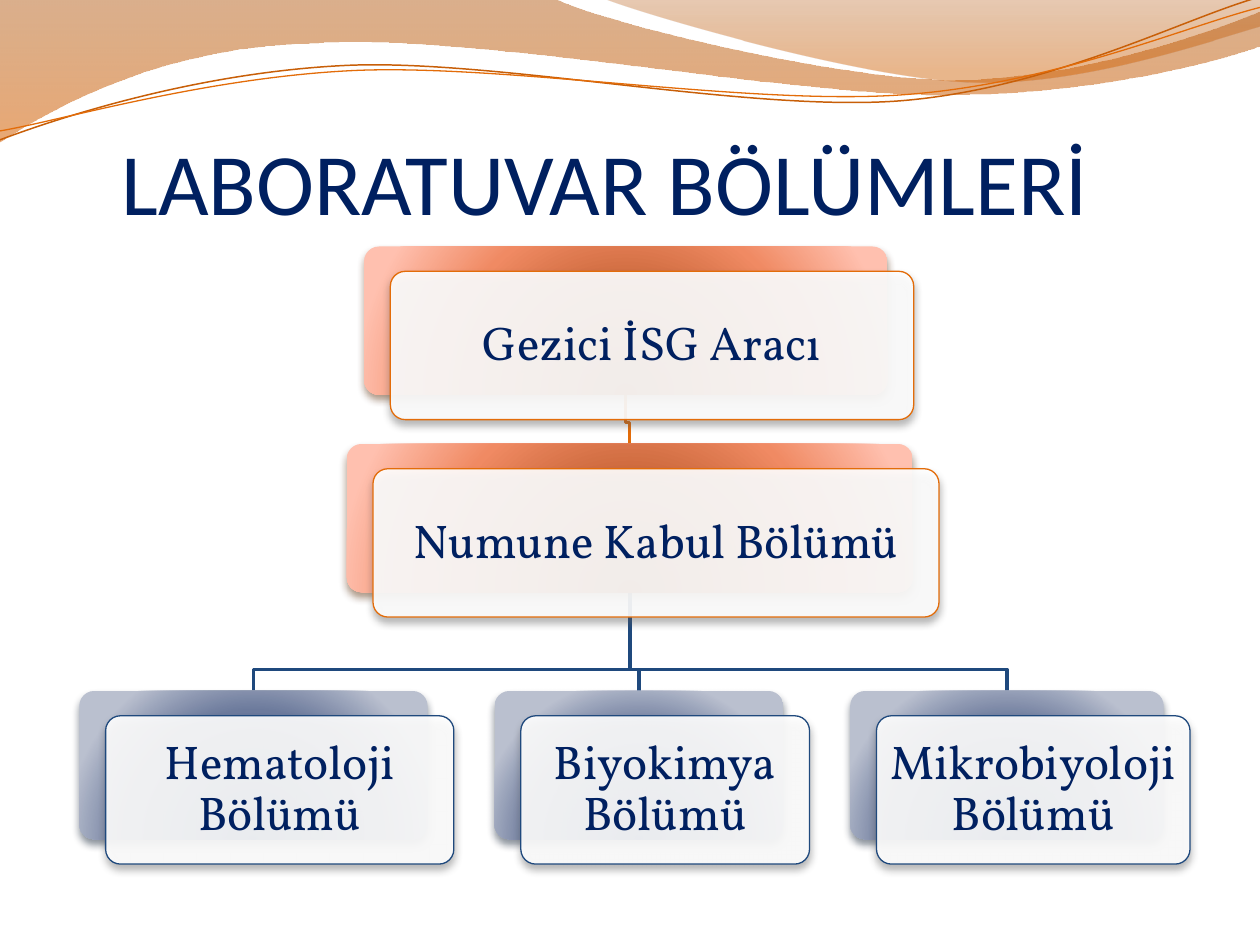
from lxml import etree
from pptx import Presentation
from pptx import util as u
from pptx.dml.color import RGBColor
from pptx.enum import shapes, text
from pptx.oxml import parse_xml
from pptx.oxml.ns import nsdecls, qn

NAVY = RGBColor(0x00, 0x20, 0x60)
WHITE = RGBColor(0xFF, 0xFF, 0xFF)
ORANGE = RGBColor(0xE3, 0x6C, 0x09)
DARK_ORANGE = RGBColor(0xC8, 0x5F, 0x08)
BLUE = RGBColor(0x1F, 0x49, 0x7D)
RUST = RGBColor(0xAF, 0x4F, 0x00)
GREY_SHADOW = RGBColor(0x5A, 0x5A, 0x5A)

# Gradient stops: position %, colour, opacity %
BAND_STOPS = [(0, RUST, 45), (100, RGBColor(0xD6, 0x61, 0x00), 55)]
PETAL_STOPS = [(0, RUST, 30), (80, RGBColor(0xD0, 0x5F, 0x00), 45)]
DOWNWARD = '<a:lin ang="5400000" scaled="0"/>'
RADIAL = ('<a:path path="circle"><a:fillToRect l="50000" t="130000" '
          'r="50000" b="-30000"/></a:path>')

ORANGE_THEME = {
    "line": ORANGE,
    "shadow": RGBColor(0x52, 0x26, 0x01),
    "stops": [(0, RGBColor(0x96, 0x37, 0x00), 100),
              (68, RGBColor(0xF0, 0x8A, 0x63), 100),
              (100, RGBColor(0xFF, 0xC0, 0xAF), 100)],
}
BLUE_THEME = {
    "line": BLUE,
    "shadow": RGBColor(0x0A, 0x1A, 0x2D),
    "stops": [(0, RGBColor(0x00, 0x27, 0x64), 100),
              (68, RGBColor(0x6C, 0x7A, 0x9C), 100),
              (100, RGBColor(0xBA, 0xC0, 0xCF), 100)],
}

# All lengths in centimetres. Outlines hold a start point, then one point
# for a straight piece or three for a Bezier piece.
BAND = [
    [(0, 0)], [(11.18, -0.03)],
    [(12.09, 0.43), (16.87, 1.6), (19.25, 1.6)],
    [(21.67, 1.6), (24.33, 0.66), (25.4, 0.23)],
    [(25.43, 0.91)],
    [(24.97, 1.12), (22.1, 1.93), (18.95, 1.91)],
    [(15.8, 1.91), (9.7, 0.71), (6.53, 0.86)],
    [(3.28, 0.91), (1.17, 2.11), (-0.03, 2.87)],
]
PETAL = [
    [(12.17, -0.03)],
    [(12.93, 0.28), (17.32, 1.57), (19.53, 1.65)],
    [(21.74, 1.75), (24.41, 0.81), (25.4, 0.53)],
    [(25.4, 0)],
]
WAVE_ROTATION = -2.7
WAVES = [
    (DARK_ORANGE, 0.85, [
        [(-0.05, 2.22)],
        [(1.19, 1.82), (4.02, 1.04), (7.05, 1.05)],
        [(10.05, 1.07), (15.02, 2.37), (18.08, 2.29)],
        [(21.13, 2.2), (23.87, 0.91), (25.41, 0.55)]]),
    (ORANGE, 0.75, [
        [(-0.04, 2.04)],
        [(1.16, 1.9), (4.18, 1.15), (7.2, 1.16)],
        [(10.25, 1.18), (15.13, 2.25), (18.18, 2.17)],
        [(21.21, 2.1), (23.93, 1.06), (25.45, 0.75)]]),
]

TITLE = "LABORATUVAR BÖLÜMLERİ"
# Text, left, top, width, theme, index of the parent
CARDS = [
    ("Gezici İSG Aracı", 7.34, 4.97, 10.55, ORANGE_THEME, None),
    ("Numune Kabul Bölümü", 6.99, 8.95, 11.41, ORANGE_THEME, 0),
    ("Hematoloji Bölümü", 1.6, 13.93, 7.02, BLUE_THEME, 1),
    ("Biyokimya Bölümü", 9.97, 13.93, 5.82, BLUE_THEME, 1),
    ("Mikrobiyoloji Bölümü", 17.14, 13.93, 6.32, BLUE_THEME, 1),
]
CARD_HEIGHT = 2.99
FRONT_SHIFT_X, FRONT_SHIFT_Y = 0.53, 0.5
BEND_ABOVE_CHILD = 0.43


def add_outline(slide, outline, close=False):
    points = [(u.Cm(x), u.Cm(y)) for piece in outline for x, y in piece]
    builder = slide.shapes.build_freeform(*points[0])
    builder.add_line_segments(points[1:], close=close)
    shape = builder.convert_to_shape()
    bend_curves(shape, outline)
    shape.shadow.inherit = False
    shape.fill.background()
    shape.line.fill.background()
    return shape


def bend_curves(shape, outline):
    """Merge the three line segments of each Bezier piece into one curve."""
    segments = iter(list(shape._element.spPr.iter(qn("a:lnTo"))))
    for piece in outline[1:]:
        first, *others = [next(segments) for _ in piece]
        if others:
            first.tag = qn("a:cubicBezTo")
            for segment in others:
                first.append(segment[0])
                segment.getparent().remove(segment)


def add_path_line(slide, outline, color, width):
    shape = add_outline(slide, outline)
    shape.line.color.rgb = color
    shape.line.width = u.Pt(width)
    return shape


def set_gradient(shape, stops, direction):
    shape.fill.background()
    stop_xml = "".join(
        f'<a:gs pos="{position * 1000}"><a:srgbClr val="{color}">'
        f'<a:alpha val="{opacity * 1000}"/></a:srgbClr></a:gs>'
        for position, color, opacity in stops)
    gradient = parse_xml(
        f'<a:gradFill {nsdecls("a")} rotWithShape="1">'
        f'<a:gsLst>{stop_xml}</a:gsLst>{direction}</a:gradFill>')
    properties = shape._element.spPr
    properties.replace(properties.find(qn("a:noFill")), gradient)


def add_rounded_box(slide, left, top, width, shadow_color):
    box = slide.shapes.add_shape(
        shapes.MSO_SHAPE.ROUNDED_RECTANGLE,
        u.Cm(left), u.Cm(top), u.Cm(width), u.Cm(CARD_HEIGHT))
    box.adjustments[0] = 0.1
    box.shadow.inherit = False
    box._element.spPr.find(qn("a:effectLst")).append(parse_xml(
        f'<a:outerShdw {nsdecls("a")} blurRad="{u.Pt(4.5)}" '
        f'dist="{u.Pt(3)}" dir="5400000" rotWithShape="0">'
        f'<a:srgbClr val="{shadow_color}"><a:alpha val="48000"/>'
        f'</a:srgbClr></a:outerShdw>'))
    return box


def write(frame, content, font_name, size, anchor, margins):
    frame.word_wrap = True
    frame.vertical_anchor = anchor
    (frame.margin_left, frame.margin_top,
     frame.margin_right, frame.margin_bottom) = map(u.Cm, margins)
    paragraph = frame.paragraphs[0]
    paragraph.text = content
    paragraph.font.name = font_name
    paragraph.font.size = u.Pt(size)
    paragraph.font.color.rgb = NAVY
    return paragraph


def add_card(slide, label, left, top, width, theme):
    back = add_rounded_box(slide, left, top, width, theme["shadow"])
    set_gradient(back, theme["stops"], RADIAL)
    back.line.fill.background()
    front = add_rounded_box(slide, left + FRONT_SHIFT_X,
                            top + FRONT_SHIFT_Y, width, GREY_SHADOW)
    front.fill.solid()
    front.fill.fore_color.rgb = WHITE
    color = front._element.spPr.find(qn("a:solidFill"))[0]
    etree.SubElement(color, qn("a:alpha")).set("val", "90000")
    front.line.color.rgb = theme["line"]
    front.line.width = u.Pt(0.75)
    paragraph = write(front.text_frame, label, "Vollkorn", 27,
                      text.MSO_ANCHOR.MIDDLE, (0.18, 0.18, 0.18, 0.18))
    paragraph.alignment = text.PP_ALIGN.CENTER
    paragraph.line_spacing = 0.9


def add_branch(slide, parent, child):
    """Link the parent's bottom centre to the child's top centre."""
    _, left, top, width, _, _ = parent
    start_x, start_y = left + width / 2, top + CARD_HEIGHT
    _, left, end_y, width, theme, _ = child
    end_x, bend_y = left + width / 2, end_y - BEND_ABOVE_CHILD
    add_path_line(slide, [[(start_x, start_y)], [(start_x, bend_y)],
                          [(end_x, bend_y)], [(end_x, end_y)]],
                  theme["line"], 2)


def main():
    presentation = Presentation()
    presentation.slide_width = u.Cm(25.4)
    presentation.slide_height = u.Cm(19.05)
    slide = presentation.slides.add_slide(presentation.slide_layouts[6])

    for outline, stops in ((BAND, BAND_STOPS), (PETAL, PETAL_STOPS)):
        set_gradient(add_outline(slide, outline, close=True), stops, DOWNWARD)
    for color, width, outline in WAVES:
        add_path_line(slide, outline, color, width).rotation = WAVE_ROTATION

    title = slide.shapes.add_textbox(
        u.Cm(2.45), u.Cm(1.52), u.Cm(22.86), u.Cm(3.18))
    write(title.text_frame, TITLE, "Calibri", 50,
          text.MSO_ANCHOR.BOTTOM, (0, 0.13, 0, 0))

    for card in CARDS:
        if card[-1] is not None:
            add_branch(slide, CARDS[card[-1]], card)
    for card in CARDS:
        add_card(slide, *card[:-1])

    presentation.save("out.pptx")


if __name__ == "__main__":
    main()
